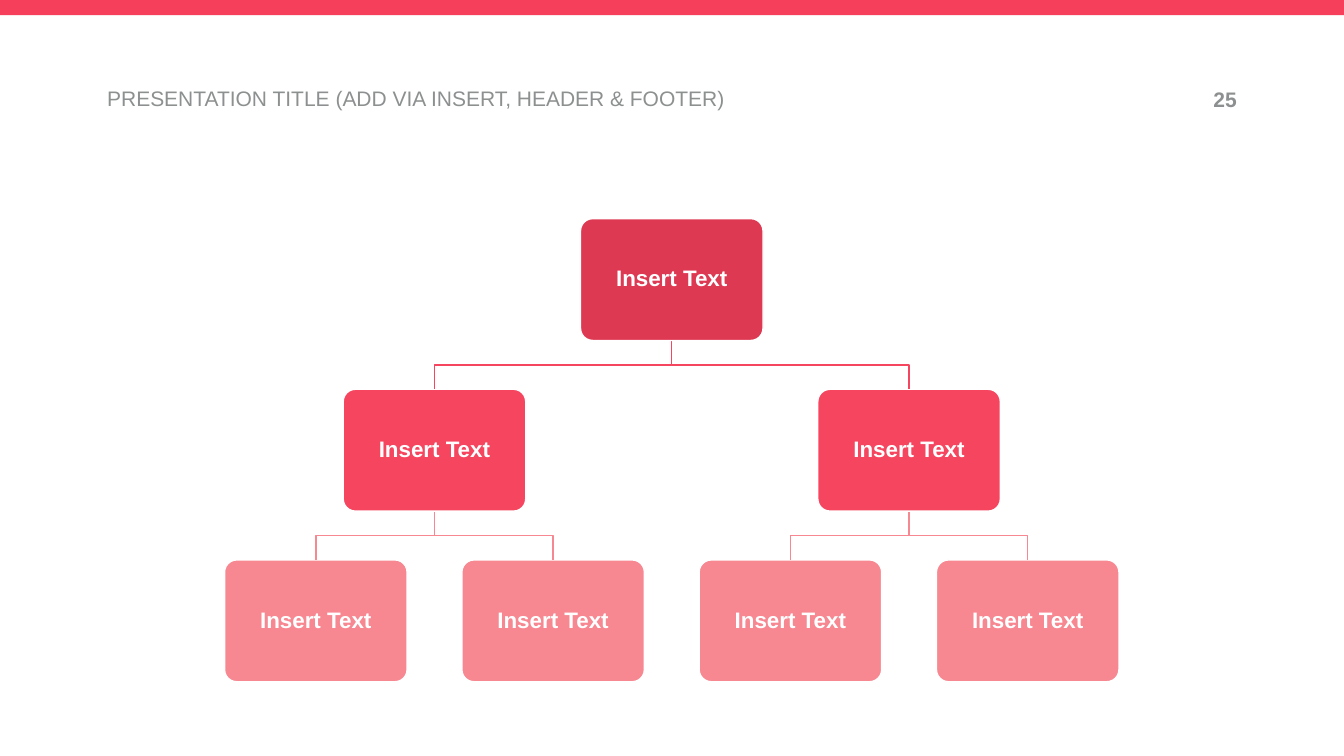
from pptx import Presentation
from pptx.dml.color import RGBColor
from pptx.enum.shapes import MSO_SHAPE
from pptx.enum.text import MSO_ANCHOR, PP_ALIGN
from pptx.util import Cm, Pt

BAR = RGBColor(0xF5, 0x3F, 0x5B)
GREY = RGBColor(0x8D, 0x90, 0x90)
WHITE = RGBColor(0xFF, 0xFF, 0xFF)
LEVEL_COLORS = [
    RGBColor(0xDE, 0x39, 0x53),
    RGBColor(0xF5, 0x45, 0x5F),
    RGBColor(0xF7, 0x87, 0x91),
]
NODE_W, NODE_H = Cm(4.6), Cm(3.07)

# Each node is (text, children)
LEAF = ("Insert Text", [])
BRANCH = ("Insert Text", [LEAF, LEAF])
TREE = ("Insert Text", [BRANCH, BRANCH])


def write(sp, text, size, color, bold, align, anchor, margin=0):
    tf = sp.text_frame
    tf.word_wrap = True
    tf.vertical_anchor = anchor
    tf.margin_left = tf.margin_right = margin
    tf.margin_top = tf.margin_bottom = margin
    p = tf.paragraphs[0]
    p.alignment = align
    r = p.add_run()
    r.text = text
    r.font.name = "Arial"
    r.font.size = Pt(size)
    r.font.bold = bold
    r.font.color.rgb = color
    return p


def add_header(slide, left, top, width, height):
    bar = slide.shapes.add_shape(MSO_SHAPE.RECTANGLE, 0, 0, left * 2 + width, Cm(0.38))
    bar.shadow.inherit = False
    bar.fill.solid()
    bar.fill.fore_color.rgb = BAR
    bar.line.fill.background()

    title = slide.shapes.title
    title.left, title.top, title.width, title.height = left, top, Cm(19.94), height
    write(title, "PRESENTATION TITLE (ADD VIA INSERT, HEADER & FOOTER)",
          15, GREY, False, PP_ALIGN.LEFT, MSO_ANCHOR.TOP)

    number_w = Cm(3.9)
    number = slide.shapes.add_textbox(left + width - number_w, top + Cm(0.03),
                                      number_w, height)
    write(number, "25", 15, GREY, True, PP_ALIGN.RIGHT, MSO_ANCHOR.TOP)


def add_node(slide, center, top, text, color):
    sp = slide.shapes.add_shape(MSO_SHAPE.ROUNDED_RECTANGLE,
                                center - NODE_W // 2, top, NODE_W, NODE_H)
    sp.adjustments[0] = 0.1
    sp.shadow.inherit = False
    sp.fill.solid()
    sp.fill.fore_color.rgb = color
    sp.line.color.rgb = WHITE
    sp.line.width = Pt(1)
    p = write(sp, text, 16, WHITE, True, PP_ALIGN.CENTER, MSO_ANCHOR.MIDDLE, Cm(0.18))
    p.line_spacing = 0.9


def add_elbow(slide, x1, y1, x2, y2, color):
    middle = (y1 + y2) // 2
    builder = slide.shapes.build_freeform(x1, y1)
    builder.add_line_segments([(x1, middle), (x2, middle), (x2, y2)], close=False)
    sp = builder.convert_to_shape()
    sp.shadow.inherit = False
    sp.fill.background()
    sp.line.color.rgb = color
    sp.line.width = Pt(1)


def add_org_chart(slide, tree, left, top, width, height):
    """Spread the leaves evenly over the box and centre each parent above its children."""
    def count_leaves(node):
        return sum(map(count_leaves, node[1])) or 1

    column = (width - NODE_W) // (count_leaves(tree) - 1)
    row = (height - NODE_H) // (len(LEVEL_COLORS) - 1)

    def place(node, first_leaf, level):
        text, children = node
        y = top + level * row
        centers = []
        for child in children:
            centers.append(place(child, first_leaf, level + 1))
            first_leaf += count_leaves(child)
        if centers:
            center = (centers[0] + centers[-1]) // 2
        else:
            center = left + NODE_W // 2 + first_leaf * column
        for child_center in centers:
            add_elbow(slide, center, y + NODE_H, child_center, y + row,
                      LEVEL_COLORS[level + 1])
        add_node(slide, center, y, text, LEVEL_COLORS[level])
        return center

    place(tree, 0, 0)


def main():
    prs = Presentation()
    prs.slide_width, prs.slide_height = Cm(33.87), Cm(19.05)
    slide = prs.slides.add_slide(prs.slide_layouts[5])
    add_header(slide, Cm(2.7), Cm(2.16), Cm(28.47), Cm(0.64))
    add_org_chart(slide, TREE, Cm(5.66), Cm(5.51), Cm(22.54), Cm(11.67))
    prs.save("out.pptx")


if __name__ == "__main__":
    main()
